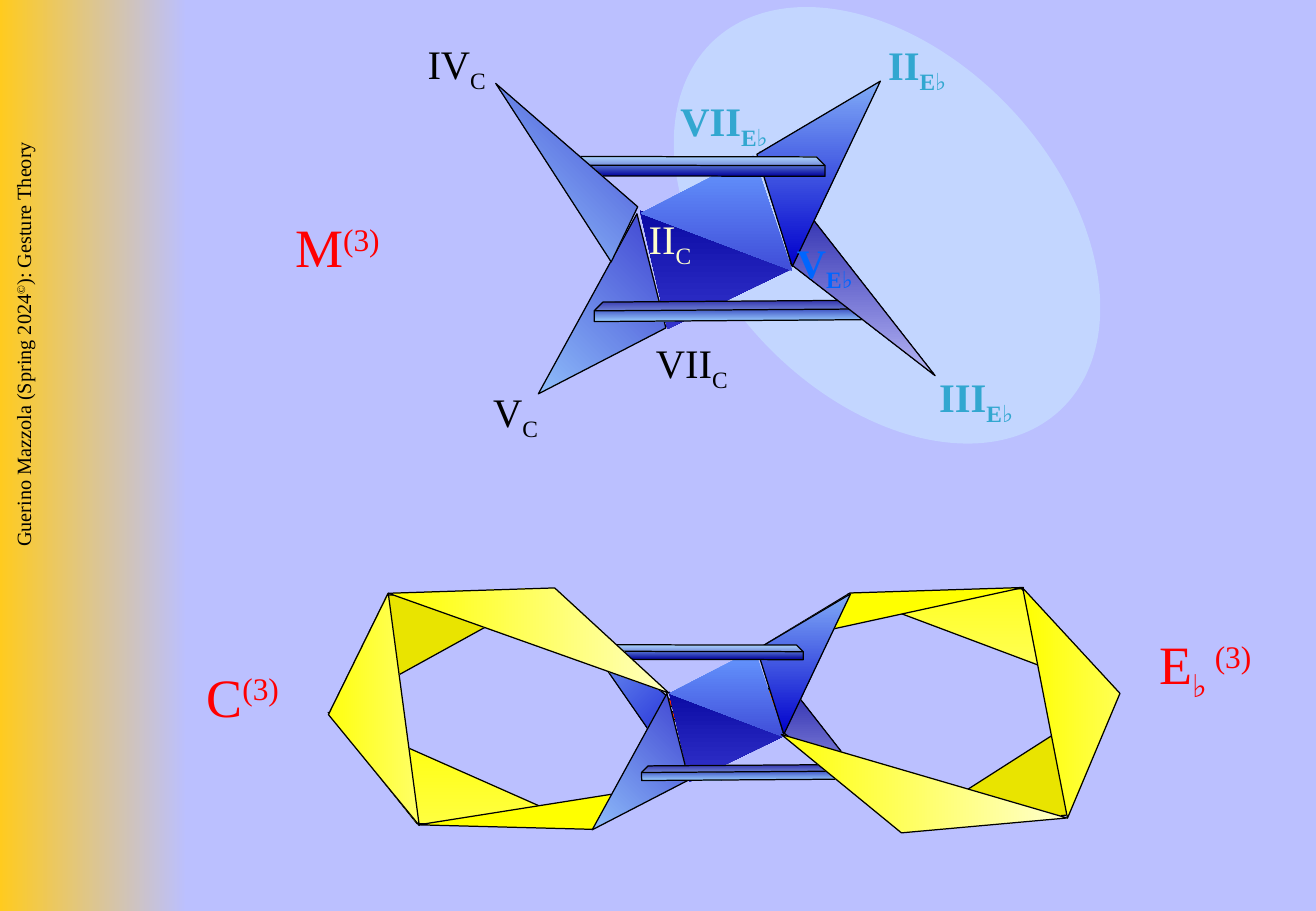
from lxml.etree import SubElement
from pptx import Presentation
from pptx.dml.color import RGBColor
from pptx.enum.shapes import MSO_SHAPE as SHAPE
from pptx.enum.text import MSO_ANCHOR, MSO_AUTO_SIZE as AUTO_SIZE, PP_ALIGN
from pptx.oxml.ns import qn
from pptx.util import Pt

PX = 9144
WIDTH, HEIGHT = 1083, 750
SERIF, SYMBOL = "Times New Roman", "Lato"
SUB, SUPER = -25, 30

COLORS = {
    "background": "BBC0FF", "gold": "FFCB1F", "black": "000000", "red": "FF0000",
    "yellow": "FFFF00", "lemon": "FFFF66", "cream": "FFFFCC", "olive": "E9E400",
    "navy": "000099", "royal": "0000CC", "indigo": "3333CC", "sky": "99CCFF",
    "azure": "6699FF", "lilac": "CCCCFF", "halo": "CCECFF", "teal": "32A7D0",
    "blue": "0066FF",
}

GRADIENTS = {
    "sidebar": (0, "gold", "background"),
    "flame": (0, "red", "yellow", "red"),
    "gold_down": (90, "yellow", "lemon"),
    "gold_across": (0, "yellow", "lemon"),
    "pale_across": (0, "yellow", "cream"),
    "core_dark": (90, "navy", "indigo"),
    "core_light": (90, "azure", "indigo"),
    "rail": (90, "navy", "sky"),
    "wing_up": (315, "sky", "indigo"),
    "wing_diagonal": (45, "sky", "royal"),
    "wing_down": (90, "sky", "royal"),
    "wing_violet": (90, "navy", "lilac"),
}

BACKDROP = [
    (SHAPE.RECTANGLE, 0, 0, 154, 750, 0, (), "sidebar", False),
    (SHAPE.NOTCHED_RIGHT_ARROW, 542, 567, 120, 34, 0, (0.5, 0.87), "flame", True),
    (SHAPE.OVAL, 590, -23, 280, 417, 316.8, (), "halo", False),
]

TRIANGLE, CUBE = SHAPE.ISOSCELES_TRIANGLE, SHAPE.CUBE
RINGS = [
    (TRIANGLE, 742, 623, 211, 62, 147.4, (0.42,), "olive", True),
    (TRIANGLE, 700, 478, 236, 54, 20.6, (0.56,), "gold_down", True),
    (TRIANGLE, 562, 555, 76, 84, 76.9, (0.75,), "core_dark", False),
    (TRIANGLE, 558, 544, 76, 78, 251.5, (0.84,), "core_light", False),
    (TRIANGLE, 243, 478, 211, 62, 331.1, (0.42,), "olive", True),
    (TRIANGLE, 249, 632, 236, 54, 203.9, (0.56,), "gold_down", True),
    (TRIANGLE, 345, 662, 216, 26, 171, (0.35,), "yellow", True),
    (TRIANGLE, 436, 549, 177, 28, 55.3, (0.62,), "wing_diagonal", True),
    (TRIANGLE, 205, 557, 193, 62, 262.4, (0.52,), "gold_across", True),
    (TRIANGLE, 476, 614, 128, 50, 118.7, (0.42,), "wing_up", True),
    (TRIANGLE, 626, 481, 216, 26, 347.7, (0.35,), "yellow", True),
    (TRIANGLE, 580, 597, 177, 28, 232, (0.62,), "wing_violet", True),
    (TRIANGLE, 794, 542, 193, 62, 79, (0.52,), "gold_across", True),
    (TRIANGLE, 586, 511, 128, 50, 295.4, (0.42,), "wing_down", True),
    (CUBE, 492, 531, 169, 12, 180.1, (0.45,), "rail", True),
    (TRIANGLE, 321, 481, 245, 50, 19.6, (0.52,), "pale_across", True),
    (CUBE, 528, 630, 172, 12, 359.6, (0.45,), "rail", True),
    (TRIANGLE, 631, 638, 245, 50, 196.3, (0.52,), "pale_across", True),
]

STAR = [
    (TRIANGLE, 542, 154, 100, 111, 76.9, (0.75,), "core_dark", False),
    (TRIANGLE, 537, 140, 100, 103, 251.5, (0.84,), "core_light", False),
    (TRIANGLE, 428, 233, 169, 66, 118.7, (0.42,), "wing_up", True),
    (CUBE, 489, 248, 227, 16, 359.6, (0.45,), "rail", True),
    (TRIANGLE, 566, 210, 234, 37, 232, (0.62,), "wing_violet", True),
    (TRIANGLE, 574, 96, 169, 66, 295.4, (0.42,), "wing_down", True),
    (CUBE, 456, 129, 223, 16, 180.1, (0.45,), "rail", True),
    (TRIANGLE, 386, 109, 175, 43, 57.1, (0.85,), "wing_up", True),
]

CREDIT = [("Guerino Mazzola (Spring 2024", 0), ("©", SUPER), ("): Gesture Theory", 0)]
CUBED = ("(3)", SUPER)
IN_C = [("C", SUB)]
IN_E_FLAT = [("E", SUB), ("♭", SUB)]

SPACES = [
    (160, 541, 84, 63, "red", [("C", 0), CUBED]),
    (944, 514, 123, 64, "red", [("E", 0), ("♭ ", SUB), CUBED]),
    (233, 171, 94, 63, "red", [("M", 0), CUBED]),
]
E_FLAT_DEGREES = [
    (646, 191, 82, 51, "blue", [("V", 0)] + IN_E_FLAT),
    (550, 74, 108, 51, "teal", [("VII", 0)] + IN_E_FLAT),
    (721, 28, 84, 51, "teal", [("II", 0)] + IN_E_FLAT),
    (763, 301, 97, 51, "teal", [("III", 0)] + IN_E_FLAT),
]
C_DEGREES = [
    (396, 314, 59, 50, "black", [("V", 0)] + IN_C),
    (342, 27, 70, 50, "black", [("IV", 0)] + IN_C),
    (530, 273, 81, 50, "black", [("VII", 0)] + IN_C),
    (524, 171, 57, 50, "cream", [("II", 0)] + IN_C),
]


def rgb(name):
    return RGBColor.from_string(COLORS[name])


def paint_gradient(shape, angle, *stops):
    shape.fill.gradient()
    shape.fill.gradient_angle = (360 - angle) % 360
    gradient = shape._element.spPr.find(qn("a:gradFill"))
    gradient.set("rotWithShape", "0")
    stop_list = gradient.find(qn("a:gsLst"))
    for old_stop in list(stop_list):
        stop_list.remove(old_stop)
    for index, name in enumerate(stops):
        position = 100000 * index // (len(stops) - 1)
        stop = SubElement(stop_list, qn("a:gs"), pos=str(position))
        SubElement(stop, qn("a:srgbClr"), val=COLORS[name])


def draw(slide, kind, left, top, width, height, turn, adjustments, paint, outlined):
    shape = slide.shapes.add_shape(kind, left * PX, top * PX, width * PX, height * PX)
    shape.shadow.inherit = False
    shape.rotation = turn
    for index, value in enumerate(adjustments):
        shape.adjustments[index] = value
    if paint in GRADIENTS:
        paint_gradient(shape, *GRADIENTS[paint])
    else:
        shape.fill.solid()
        shape.fill.fore_color.rgb = rgb(paint)
    if outlined:
        shape.line.color.rgb = rgb("black")
        shape.line.width = Pt(0.75)
    else:
        shape.line.fill.background()
    return shape


def write(slide, left, top, width, height, color, pieces, size, bold=False):
    label = slide.shapes.add_textbox(left * PX, top * PX, width * PX, height * PX)
    frame = label.text_frame
    frame.word_wrap = False
    frame.auto_size = AUTO_SIZE.SHAPE_TO_FIT_TEXT
    for text, baseline in pieces:
        run = frame.paragraphs[0].add_run()
        run.text = text
        run.font.name = SYMBOL if "♭" in text else SERIF
        run.font.size = Pt(size)
        run.font.bold = bold
        run.font.color.rgb = rgb(color)
        if baseline:
            run.font._element.set("baseline", str(baseline * 1000))
    return label


def main():
    deck = Presentation()
    deck.slide_width, deck.slide_height = WIDTH * PX, HEIGHT * PX
    slide = deck.slides.add_slide(deck.slide_layouts[6])
    slide.background.fill.solid()
    slide.background.fill.fore_color.rgb = rgb("background")

    for part in BACKDROP + RINGS + STAR:
        shape = draw(slide, *part)
        if part[0] == CUBE and part[5] < 270:
            shape._element.spPr.find(qn("a:xfrm")).set("flipV", "1")
        if part[7] == "halo":
            color = shape._element.spPr.find(qn("a:solidFill"))[0]
            SubElement(color, qn("a:alpha"), val="50000")

    credit = write(slide, -237, 348, 563, 81, "black", CREDIT, 12)
    credit.rotation = 270
    credit.text_frame.word_wrap = True
    credit.text_frame.auto_size = AUTO_SIZE.NONE
    credit.text_frame.vertical_anchor = MSO_ANCHOR.TOP
    credit.text_frame.paragraphs[0].alignment = PP_ALIGN.RIGHT

    for labels, size, bold in ((SPACES, 32, False), (E_FLAT_DEGREES, 24, True),
                               (C_DEGREES, 24, False)):
        for label in labels:
            write(slide, *label, size, bold)

    deck.save("out.pptx")


if __name__ == "__main__":
    main()
